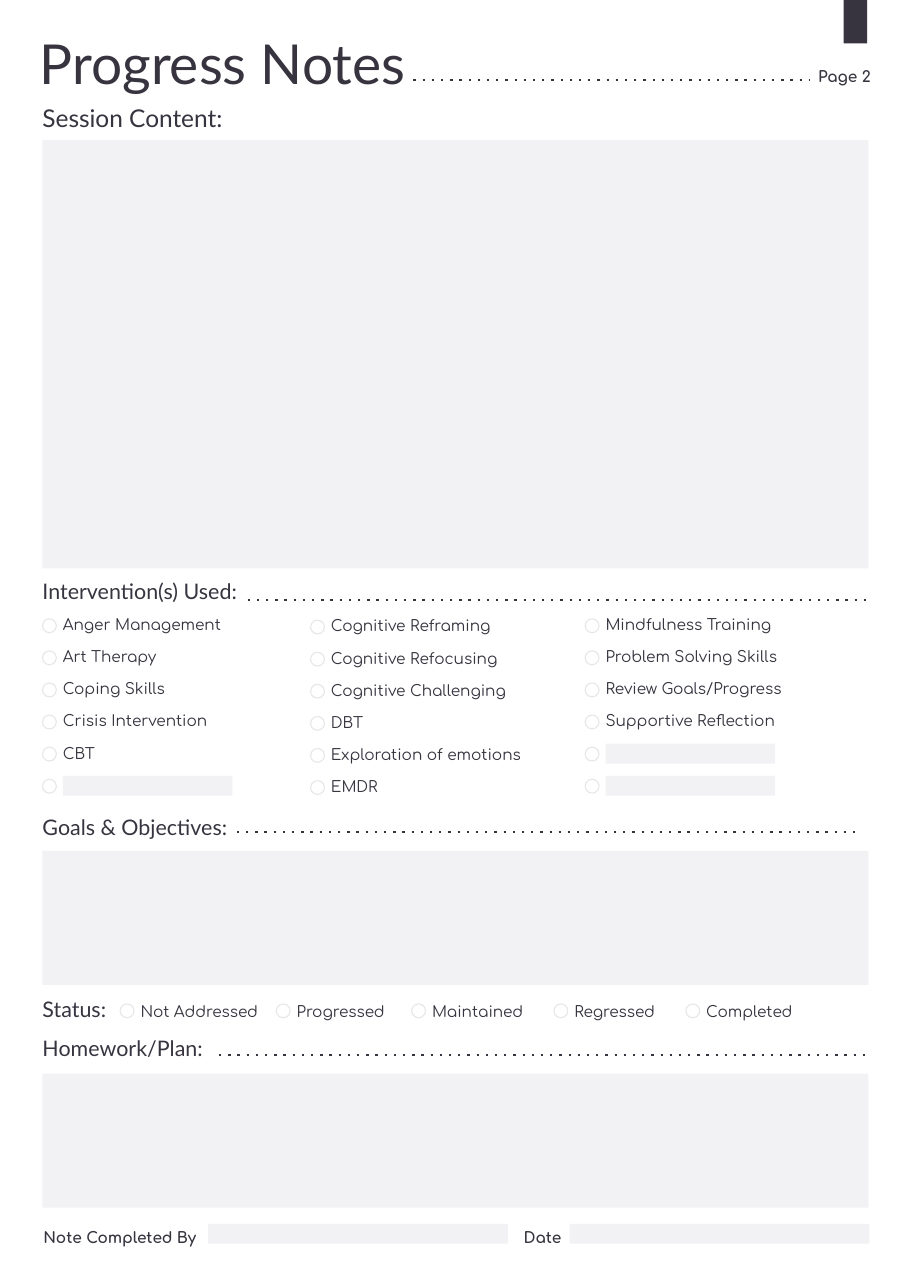
from dataclasses import dataclass

import pptx
import pptx.dml.color
import pptx.enum.dml
import pptx.enum.shapes
import pptx.enum.text
import pptx.oxml.ns
import pptx.util
from lxml import etree
from pptx.util import Cm


@dataclass(frozen=True)
class Theme:
    ink: pptx.dml.color.RGBColor = pptx.dml.color.RGBColor(0x37, 0x34, 0x3F)
    field: pptx.dml.color.RGBColor = pptx.dml.color.RGBColor(0xF2, 0xF1, 0xF3)
    ring: pptx.dml.color.RGBColor = pptx.dml.color.RGBColor(0xE6, 0xE7, 0xE8)
    heading_font: str = "Lato"
    body_font: str = "Comfortaa"
    title: int = 36
    section: int = 16
    heading: int = 14
    body: int = 10


theme = Theme()
RECT = pptx.enum.shapes.MSO_SHAPE.RECTANGLE
OVAL = pptx.enum.shapes.MSO_SHAPE.OVAL


def add_text(shapes, words, left, top, width, height, size=theme.body, font=theme.body_font, bold=False):
    frame = shapes.add_textbox(Cm(left), Cm(top), Cm(width), Cm(height)).text_frame
    frame.margin_left = frame.margin_right = frame.margin_top = frame.margin_bottom = 0
    frame.word_wrap = True
    frame.auto_size = pptx.enum.text.MSO_AUTO_SIZE.SHAPE_TO_FIT_TEXT
    paragraph = frame.paragraphs[0]
    paragraph.text = words
    paragraph.font.size = pptx.util.Pt(size)
    paragraph.font.name = font
    paragraph.font.bold = bold
    paragraph.font.color.rgb = theme.ink


def add_mark(shapes, kind, left, top, width, height, fill=None):
    mark = shapes.add_shape(kind, Cm(left), Cm(top), Cm(width), Cm(height))
    mark.shadow.inherit = False
    if fill is None:
        mark.fill.background()
        mark.line.color.rgb = theme.ring
        mark.line.width = pptx.util.Pt(0.75)
    else:
        mark.fill.solid()
        mark.fill.fore_color.rgb = fill
        mark.line.fill.background()


deck = pptx.Presentation()
deck.slide_width = Cm(21)
deck.slide_height = Cm(29.7)
page = deck.slides.add_slide(deck.slide_layouts[6])

add_mark(page.shapes, RECT, 19.45, 0, 0.54, 1, theme.ink)
for top, height in [(3.23, 9.88), (19.62, 3.09), (24.76, 3.09)]:
    add_mark(page.shapes, RECT, 0.98, top, 19.04, height, theme.field)

for start, end, level in [
    (9.53, 18.67, 1.84),
    (5.71, 20.03, 13.83),
    (5.46, 19.79, 19.18),
    (5.05, 20.03, 24.32),
]:
    leader = page.shapes.add_connector(
        pptx.enum.shapes.MSO_CONNECTOR.STRAIGHT, Cm(start), Cm(level), Cm(end), Cm(level)
    )
    leader.line.color.rgb = theme.ink
    leader.line.width = pptx.util.Pt(1.5)
    leader.line.dash_style = pptx.enum.dml.MSO_LINE.ROUND_DOT
    outline = leader.element.spPr
    outline.find(".//" + pptx.oxml.ns.qn("a:prstDash")).set("val", "dot")
    etree.SubElement(outline, pptx.oxml.ns.qn("a:effectLst"))

for words, left, top, width, height, size in [
    ("Progress Notes", 0.92, 0.67, 8.81, 1.55, theme.title),
    ("Session Content:", 0.98, 2.38, 5, 0.69, theme.section),
    ("Intervention(s) Used:", 0.98, 13.34, 5.79, 0.6, theme.heading),
    ("Goals & Objectives:", 0.98, 18.78, 4.55, 0.6, theme.heading),
    ("Status:", 0.98, 22.97, 1.65, 0.6, theme.heading),
    ("Homework/Plan:", 0.98, 23.87, 4.55, 0.6, theme.heading),
]:
    add_text(page.shapes, words, left, top, width, height, size, theme.heading_font)
add_text(page.shapes, "Page 2", 18.86, 1.55, 1.28, 0.43, bold=True)

interventions = [
    (0.98, 14.27, ["Anger Management", "Art Therapy", "Coping Skills",
                   "Crisis Intervention", "CBT", None]),
    (7.16, 14.3, ["Cognitive Reframing", "Cognitive Refocusing", "Cognitive Challenging",
                  "DBT", "Exploration of emotions", "EMDR"]),
    (13.49, 14.27, ["Mindfulness Training", "Problem Solving Skills", "Review Goals/Progress",
                    "Supportive Reflection", None, None]),
]
for left, first_row, choices in interventions:
    column = page.shapes.add_group_shape().shapes
    for row, choice in enumerate(choices):
        top = first_row + row * 0.74
        add_mark(column, OVAL, left, top, 0.32, 0.32)
        if choice:
            add_text(column, choice, left + 0.47, top - 0.08, 4.7, 0.43)
        else:
            add_mark(column, RECT, left + 0.47, top - 0.08, 3.91, 0.46, theme.field)

for status, left, width in [
    ("Not Addressed", 2.77, 3),
    ("Progressed", 6.37, 2.6),
    ("Maintained", 9.49, 2.5),
    ("Regressed", 12.77, 2.35),
    ("Completed", 15.81, 2.35),
]:
    option = page.shapes.add_group_shape().shapes
    add_mark(option, OVAL, left, 23.15, 0.32, 0.32)
    add_text(option, status, left + 0.47, 23.11, width, 0.43)

for label, left, width, blank_left in [
    ("Note Completed By", 1, 3.63, 4.8),
    ("Date", 12.07, 0.97, 13.13),
]:
    signature = page.shapes.add_group_shape().shapes
    add_text(signature, label, left, 28.32, width, 0.43, bold=True)
    add_mark(signature, RECT, blank_left, 28.22, 6.91, 0.46, theme.field)

deck.save("out.pptx")
